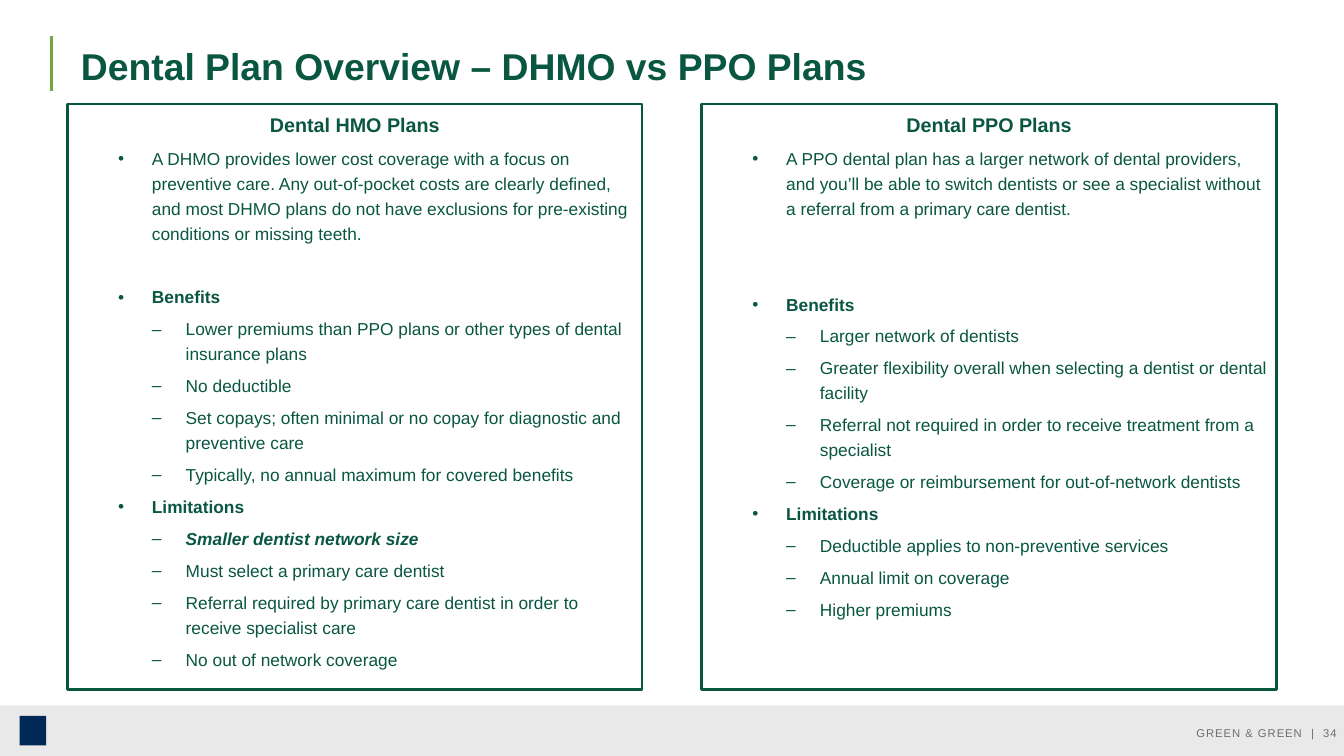
from lxml import etree
from pptx import Presentation
from pptx.dml.color import RGBColor
from pptx.enum.shapes import MSO_CONNECTOR, MSO_SHAPE
from pptx.enum.text import MSO_ANCHOR, PP_ALIGN
from pptx.oxml.ns import qn
from pptx.util import Inches, Pt

TITLE_ONLY = 5
RECTANGLE = MSO_SHAPE.RECTANGLE
STRAIGHT = MSO_CONNECTOR.STRAIGHT
TOP, MIDDLE = MSO_ANCHOR.TOP, MSO_ANCHOR.MIDDLE
LEFT, CENTER, RIGHT = PP_ALIGN.LEFT, PP_ALIGN.CENTER, PP_ALIGN.RIGHT

COLORS = {
    "green": "095641",
    "lime": "73A641",
    "footer": "E9E9EA",
    "footer_text": "6D6E71",
    "navy": "002855",
    "white": "FFFFFF",
}

# Paragraph styles: bullet sign, left margin in inches, level, font
HANGING = 0.38
STYLES = {
    "intro": {"bullet": "•", "margin": 0.85, "level": 1, "font": {}},
    "topic": {"bullet": "•", "margin": 0.85, "level": 1, "font": {"bold": True}},
    "point": {"bullet": "‒", "margin": 1.23, "level": 2, "font": {}},
    "key point": {"bullet": "‒", "margin": 1.23, "level": 2,
                  "font": {"bold": True, "italic": True}},
}

PANEL_LEFT, PANEL_STEP = 0.76, 7.13
BODY_SPACE = 5.7

# Each plan: heading, space before the benefits, paragraphs
PLANS = [
    ("Dental HMO Plans", 31.6, [
        ("intro", "A DHMO provides lower cost coverage with a focus on preventive care. "
                  "Any out-of-pocket costs are clearly defined, and most DHMO plans do not "
                  "have exclusions for pre-existing conditions or missing teeth."),
        ("topic", "Benefits"),
        ("point", "Lower premiums than PPO plans or other types of dental insurance plans"),
        ("point", "No deductible"),
        ("point", "Set copays; often minimal or no copay for diagnostic and preventive care"),
        ("point", "Typically, no annual maximum for covered benefits"),
        ("topic", "Limitations"),
        ("key point", "Smaller dentist network size"),
        ("point", "Must select a primary care dentist"),
        ("point", "Referral required by primary care dentist in order to receive "
                  "specialist care"),
        ("point", "No out of network coverage"),
    ]),
    ("Dental PPO Plans", 57.5, [
        ("intro", "A PPO dental plan has a larger network of dental providers, and you’ll "
                  "be able to switch dentists or see a specialist without a referral from "
                  "a primary care dentist."),
        ("topic", "Benefits"),
        ("point", "Larger network of dentists"),
        ("point", "Greater flexibility overall when selecting a dentist or dental facility"),
        ("point", "Referral not required in order to receive treatment from a specialist"),
        ("point", "Coverage or reimbursement for out-of-network dentists"),
        ("topic", "Limitations"),
        ("point", "Deductible applies to non-preventive services"),
        ("point", "Annual limit on coverage"),
        ("point", "Higher premiums"),
    ]),
]


def rgb(name):
    return RGBColor.from_string(COLORS[name])


def set_frame(frame, anchor, side=0.1, edge=0.05):
    values = {
        "word_wrap": True,
        "vertical_anchor": anchor,
        "margin_left": Inches(side),
        "margin_right": Inches(side),
        "margin_top": Inches(edge),
        "margin_bottom": Inches(edge),
    }
    for name, value in values.items():
        setattr(frame, name, value)


def add_run(paragraph, text, size, color="green", **font):
    run = paragraph.add_run()
    run.text = text
    values = {"name": "Arial", "size": Pt(size), "bold": False, "italic": False, **font}
    for name, value in values.items():
        setattr(run.font, name, value)
    run.font.color.rgb = rgb(color)
    return run


def add_bullet(paragraph, sign, margin):
    properties = paragraph._p.get_or_add_pPr()
    properties.set("marL", str(Inches(margin)))
    properties.set("indent", str(-Inches(HANGING)))
    color = etree.SubElement(properties, qn("a:buClr"))
    etree.SubElement(color, qn("a:srgbClr"), val=COLORS["green"])
    etree.SubElement(properties, qn("a:buFont"), typeface="Arial")
    etree.SubElement(properties, qn("a:buChar"), char=sign)


def add_rectangle(slide, left, top, width, height, fill, line=None):
    shape = slide.shapes.add_shape(
        RECTANGLE, Inches(left), Inches(top), Inches(width), Inches(height))
    shape.shadow.inherit = False
    shape.fill.solid()
    shape.fill.fore_color.rgb = rgb(fill)
    if line:
        shape.line.color.rgb = rgb(line)
        shape.line.width = Pt(2.25)
    else:
        shape.line.fill.background()
    return shape


def add_title(slide, text):
    title = slide.shapes.title
    title.left, title.top = Inches(0.81), Inches(0.5)
    title.width, title.height = Inches(13.42), Inches(0.48)
    set_frame(title.text_frame, MIDDLE, edge=0)
    paragraph = title.text_frame.paragraphs[0]
    paragraph.alignment = LEFT
    add_run(paragraph, text, 30.2, bold=True)


def add_accent_line(slide):
    line = slide.shapes.add_connector(
        STRAIGHT, Inches(0.58), Inches(0.4), Inches(0.58), Inches(1.02))
    line.line.color.rgb = rgb("lime")
    line.line.width = Pt(2)
    etree.SubElement(line._element.spPr, qn("a:effectLst"))


def add_footer(slide, text):
    add_rectangle(slide, 0, 7.93, 15.11, 0.57, "footer")
    add_rectangle(slide, 0.22, 8.05, 0.3, 0.33, "navy")
    box = slide.shapes.add_textbox(Inches(11.71), Inches(8.06), Inches(3.4), Inches(0.36))
    set_frame(box.text_frame, MIDDLE, side=0.08)
    paragraph = box.text_frame.paragraphs[0]
    paragraph.alignment = RIGHT
    run = add_run(paragraph, text, 9.1, "footer_text")
    run._r.get_or_add_rPr().set("spc", "80")


def add_plan_panel(slide, left, heading, benefits_space, items):
    panel = add_rectangle(slide, left, 1.17, 6.46, 6.58, "white", "green")
    frame = panel.text_frame
    set_frame(frame, TOP)
    paragraph = frame.paragraphs[0]
    paragraph.alignment = CENTER
    paragraph.line_spacing = 1.2
    add_run(paragraph, heading, 16, bold=True)

    for style_name, text in items:
        style = STYLES[style_name]
        paragraph = frame.add_paragraph()
        add_bullet(paragraph, style["bullet"], style["margin"])
        values = {
            "alignment": LEFT,
            "level": style["level"],
            "line_spacing": 1.2,
            "space_before": Pt(benefits_space if text == "Benefits" else BODY_SPACE),
        }
        for name, value in values.items():
            setattr(paragraph, name, value)
        add_run(paragraph, text, 14, **style["font"])


def main():
    presentation = Presentation()
    presentation.slide_width = Inches(15.11)
    presentation.slide_height = Inches(8.5)
    slide = presentation.slides.add_slide(presentation.slide_layouts[TITLE_ONLY])

    # Title and footer
    add_title(slide, "Dental Plan Overview – DHMO vs PPO Plans")
    add_accent_line(slide)
    add_footer(slide, "GREEN & GREEN  |  34")

    # Plan comparison
    for index, plan in enumerate(PLANS):
        add_plan_panel(slide, PANEL_LEFT + index * PANEL_STEP, *plan)

    presentation.save("out.pptx")


if __name__ == "__main__":
    main()
